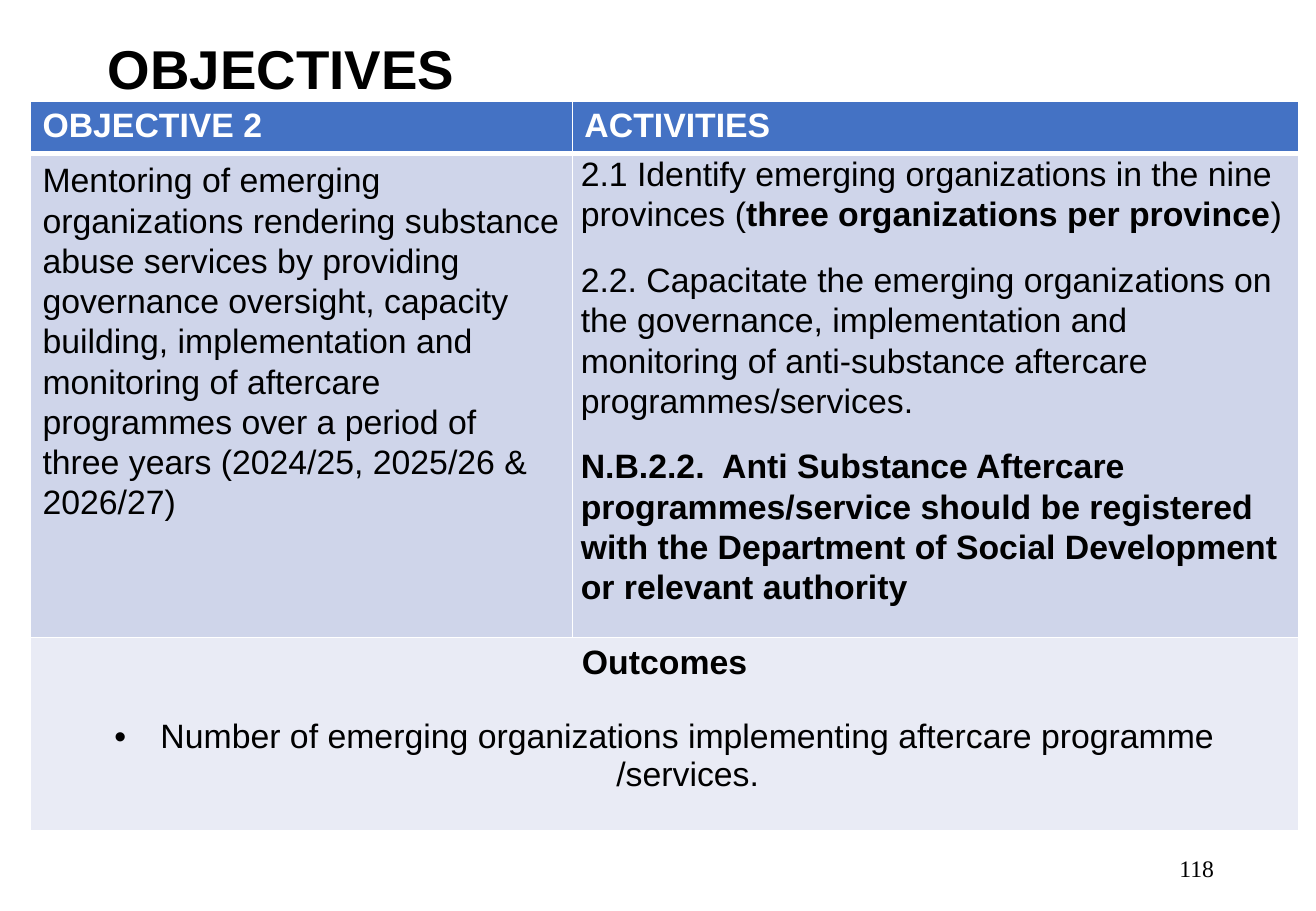
from dataclasses import dataclass

from lxml.etree import SubElement
from pptx import Presentation
from pptx.dml.color import RGBColor
from pptx.enum.text import MSO_ANCHOR, PP_ALIGN
from pptx.oxml import parse_xml
from pptx.oxml.ns import nsdecls, qn
from pptx.util import Inches, Pt


@dataclass(frozen=True)
class Theme:
    heading_font: str = "Arial"
    number_font: str = "Times New Roman"
    black: str = "000000"
    white: str = "FFFFFF"
    header_fill: str = "4472C4"
    body_fill: str = "CFD5EA"
    outcome_fill: str = "E9EBF5"
    title_size: float = 32.4
    table_size: float = 20
    number_size: float = 14
    thin_border: float = 1
    thick_border: float = 3


THEME = Theme()
BODY_SPACING = {"line_spacing": 1.07, "before": 6, "after": 9}


def write_paragraph(frame, *runs, first=True, font=THEME.heading_font,
                    size=THEME.table_size, color=THEME.black, bold=False,
                    align=PP_ALIGN.LEFT, line_spacing=None, before=0, after=0,
                    bullet=None, indent=0):
    paragraph = frame.paragraphs[0] if first else frame.add_paragraph()
    paragraph.alignment = align
    if bullet:
        properties = paragraph._p.get_or_add_pPr()
        properties.set("marL", str(Inches(indent)))
        properties.set("indent", str(-Inches(indent)))
        SubElement(properties, qn("a:buFont")).set("typeface", font)
        SubElement(properties, qn("a:buChar")).set("char", bullet)
    paragraph.line_spacing = line_spacing
    paragraph.space_before = Pt(0 if first else before)
    paragraph.space_after = Pt(after)
    for index, text in enumerate(runs):
        run = paragraph.add_run()
        run.text = text
        run.font.name = font
        run.font.size = Pt(size)
        run.font.bold = bold or index % 2 == 1
        run.font.color.rgb = RGBColor.from_string(color)


def add_text(slide, left, top, width, height, text, **style):
    frame = slide.shapes.add_textbox(
        Inches(left), Inches(top), Inches(width), Inches(height)).text_frame
    frame.word_wrap = True
    frame.vertical_anchor = MSO_ANCHOR.MIDDLE
    write_paragraph(frame, text, **style)


def style_cell(cell, fill, top=THEME.thin_border, bottom=THEME.thin_border):
    cell.fill.solid()
    cell.fill.fore_color.rgb = RGBColor.from_string(fill)
    widths = {"lnL": THEME.thin_border, "lnR": THEME.thin_border,
              "lnT": top, "lnB": bottom}
    for position, (side, width) in enumerate(widths.items()):
        border = parse_xml(
            f'<a:{side} {nsdecls("a")} w="{Pt(width)}"><a:solidFill>'
            f'<a:srgbClr val="{THEME.white}"/></a:solidFill></a:{side}>')
        cell._tc.get_or_add_tcPr().insert(position, border)


def add_objectives_table(slide):
    column_widths = (4.46, 5.98)
    row_heights = (0.38, 3.51, 1.59)
    table = slide.shapes.add_table(
        len(row_heights), len(column_widths), Inches(0.25), Inches(0.83),
        Inches(sum(column_widths)), Inches(sum(row_heights))).table
    for column, width in zip(table.columns, column_widths):
        column.width = Inches(width)
    for row, height in zip(table.rows, row_heights):
        row.height = Inches(height)

    for column, heading in enumerate(("OBJECTIVE 2", "ACTIVITIES")):
        header, body, outcome = (table.cell(row, column) for row in range(3))
        style_cell(header, THEME.header_fill, bottom=THEME.thick_border)
        style_cell(body, THEME.body_fill, top=THEME.thick_border)
        style_cell(outcome, THEME.outcome_fill)
        write_paragraph(header.text_frame, heading, color=THEME.white, bold=True)

    write_paragraph(
        table.cell(1, 0).text_frame,
        "Mentoring of emerging organizations rendering substance abuse services "
        "by providing governance oversight, capacity building, implementation "
        "and monitoring of aftercare programmes over a period of three years "
        "(2024/25, 2025/26 & 2026/27)", **BODY_SPACING)

    activities = table.cell(1, 1)
    activities.margin_left = activities.margin_right = Inches(0.07)
    activities.margin_top = activities.margin_bottom = Inches(0)
    write_paragraph(
        activities.text_frame,
        "2.1 Identify emerging organizations in the nine provinces (",
        "three organizations per province", ")", **BODY_SPACING)
    write_paragraph(
        activities.text_frame,
        "2.2. Capacitate the emerging organizations on the governance, "
        "implementation and monitoring of anti-substance aftercare "
        "programmes/services.", first=False, **BODY_SPACING)
    write_paragraph(
        activities.text_frame,
        "N.B.2.2.  Anti Substance Aftercare programmes/service should be "
        "registered with the Department of Social Development or relevant "
        "authority", first=False, bold=True, **BODY_SPACING)

    outcomes = table.cell(2, 0)
    outcomes.merge(table.cell(2, 1))
    write_paragraph(outcomes.text_frame, "Outcomes", bold=True,
                    align=PP_ALIGN.CENTER)
    write_paragraph(
        outcomes.text_frame,
        "Number of emerging organizations implementing aftercare programme "
        "/services.", first=False, align=PP_ALIGN.CENTER, before=22,
        bullet="•", indent=0.38)


def main():
    presentation = Presentation()
    presentation.slide_width = Inches(10.83)
    presentation.slide_height = Inches(7.5)
    slide = presentation.slides.add_slide(presentation.slide_layouts[6])
    add_text(slide, 0.79, 0.27, 8.88, 0.58, "OBJECTIVES",
             size=THEME.title_size, bold=True)
    add_text(slide, 7.65, 6.95, 2.44, 0.4, "118", font=THEME.number_font,
             size=THEME.number_size, align=PP_ALIGN.RIGHT)
    add_objectives_table(slide)
    presentation.save("out.pptx")


if __name__ == "__main__":
    main()
